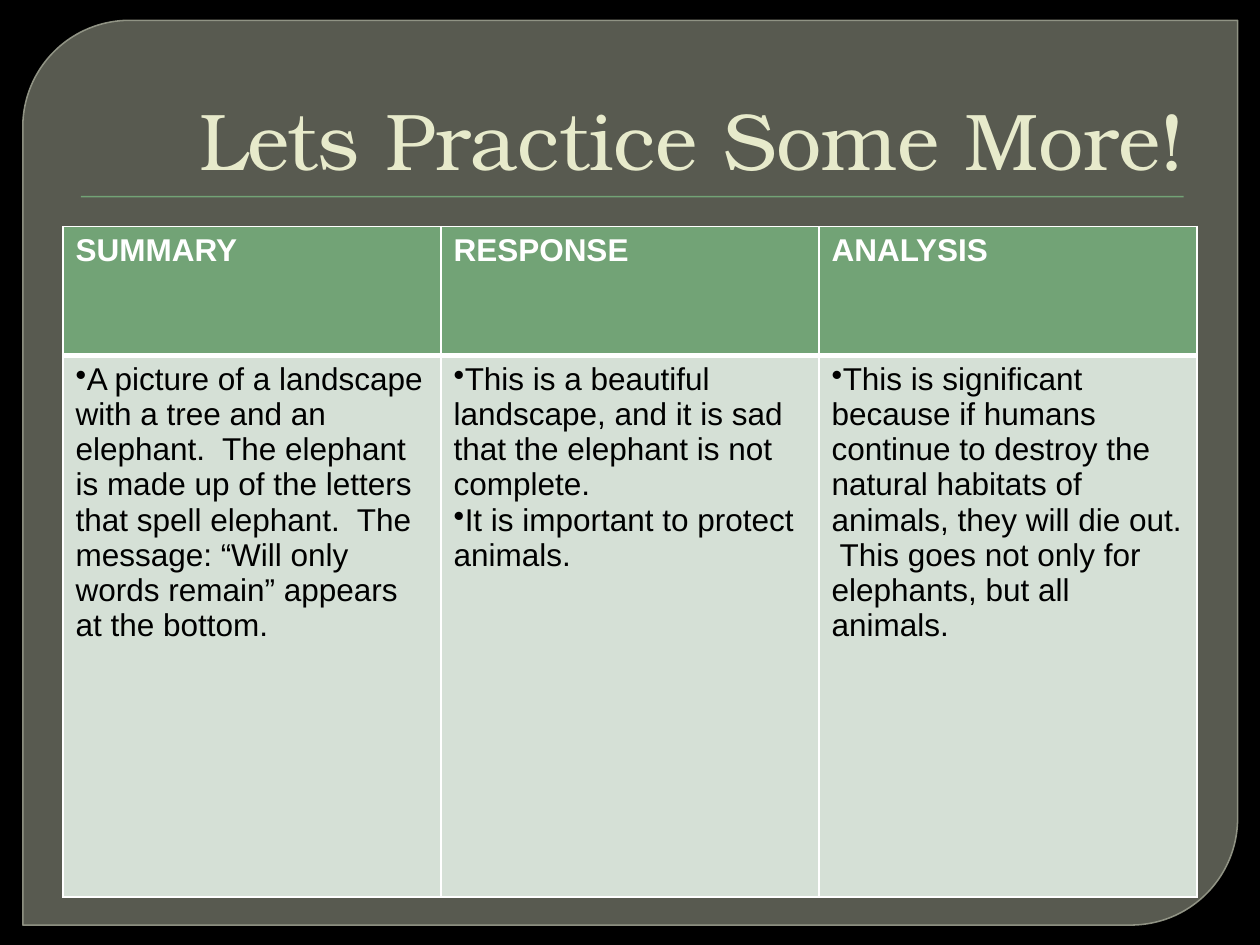
"""Build the practice slide with its summary, response and analysis table."""
from lxml.etree import SubElement
from pptx import Presentation
from pptx.dml.color import RGBColor
from pptx.enum.shapes import MSO_SHAPE as Shape
from pptx.enum.text import MSO_ANCHOR as Anchor, PP_ALIGN as Align
from pptx.oxml.ns import qn
from pptx.util import Cm, Pt

BLACK = RGBColor(0x00, 0x00, 0x00)
WHITE = RGBColor(0xFF, 0xFF, 0xFF)
OLIVE = RGBColor(0x88, 0x8B, 0x7B)
EDGE = RGBColor(0x9D, 0xA0, 0x90)
GREEN = RGBColor(0x72, 0xA3, 0x76)
PALE = RGBColor(0xD5, 0xE0, 0xD6)
CREAM = RGBColor(0xE7, 0xEA, 0xCB)

COLUMNS = [
    ("SUMMARY", [
        "A picture of a landscape with a tree and an elephant.  The elephant is made up "
        "of the letters that spell elephant.  The message: “Will only words remain” "
        "appears at the bottom."]),
    ("RESPONSE", [
        "This is a beautiful landscape, and it is sad that the elephant is not complete.",
        "It is important to protect animals."]),
    ("ANALYSIS", [
        "This is significant because if humans continue to destroy the natural habitats "
        "of animals, they will die out.  This goes not only for elephants, but all "
        "animals."]),
]


class Deck:
    def __init__(self, prs):
        self.s = prs.slides.add_slide(prs.slide_layouts[6])
        self.title_font, self.body_font = "TeX Gyre Bonum", "Arial"
        self.title_size, self.body_size = Pt(46), Pt(18)

    def background(self, color):
        fill = self.s.background.fill
        fill.solid()
        fill.fore_color.rgb = color

    def shape(self, kind, box, color):
        sp = self.s.shapes.add_shape(kind, *map(Cm, box))
        sp.shadow.inherit = False
        sp.fill.solid()
        sp.fill.fore_color.rgb = color
        sp.line.fill.background()
        return sp

    def panel(self, box):
        sp = self.shape(Shape.ROUND_2_DIAG_RECTANGLE, box, OLIVE)
        sp.adjustments[0], sp.adjustments[1] = 0.118, 0
        sp.line.color.rgb = EDGE
        sp.line.width = Pt(0.87)
        fills = sp.fill, sp.line.fill
        for fill, alpha in zip(fills, (65, 88)):
            color = fill._xPr.find(qn("a:solidFill"))[0]
            SubElement(color, qn("a:alpha"), val=str(alpha * 1000))

    def run(self, p, text, font, size, color, bold=False):
        r = p.add_run()
        r.text = text
        r.font.name, r.font.size, r.font.bold = font, size, bold
        r.font.color.rgb = color

    def title(self, box, text):
        tf = self.s.shapes.add_textbox(*map(Cm, box)).text_frame
        tf.word_wrap = True
        tf.vertical_anchor = Anchor.BOTTOM
        p = tf.paragraphs[0]
        p.alignment = Align.RIGHT
        self.run(p, text, self.title_font, self.title_size, CREAM)

    def cell(self, cell, texts, fill, color, header):
        tcPr = cell._tc.get_or_add_tcPr()
        for side in "LRTB":
            width = Pt(3 if (side == "B") == header and side in "TB" else 1)
            if not header and side == "B":
                width = Pt(1)
            ln = SubElement(tcPr, qn(f"a:ln{side}"), w=str(width))
            SubElement(SubElement(ln, qn("a:solidFill")), qn("a:srgbClr"), val=str(WHITE))
        cell.fill.solid()
        cell.fill.fore_color.rgb = fill
        tf = cell.text_frame
        for i, text in enumerate(texts):
            p = tf.add_paragraph() if i else tf.paragraphs[0]
            if not header:
                pPr = p._p.get_or_add_pPr()
                pPr.set("marL", "0")
                pPr.set("indent", "0")
                SubElement(pPr, qn("a:buChar"), char="•")
            self.run(p, text, self.body_font, self.body_size, color, header)

    def table(self, box, heights, columns):
        tb = self.s.shapes.add_table(len(heights), len(columns), *map(Cm, box)).table
        for row, height in zip(tb.rows, heights):
            row.height = Cm(height)
        for i, (heading, points) in enumerate(columns):
            tb.columns[i].width = Cm(box[2] / len(columns))
            self.cell(tb.cell(0, i), [heading], GREEN, WHITE, True)
            self.cell(tb.cell(1, i), points, PALE, BLACK, False)


def main():
    prs = Presentation()
    prs.slide_width, prs.slide_height = Cm(25.4), Cm(19.05)
    deck = Deck(prs)
    deck.background(BLACK)
    deck.panel((0.46, 0.41, 24.49, 18.24))
    deck.shape(Shape.RECTANGLE, (1.63, 3.95, 22.23, 0.03), GREEN)
    deck.title((1.27, 0.71, 22.86, 3.18), "Lets Practice Some More!")
    deck.table((1.27, 4.57, 22.86, 13.51), (2.59, 10.92), COLUMNS)
    prs.save("out.pptx")


if __name__ == "__main__":
    main()
